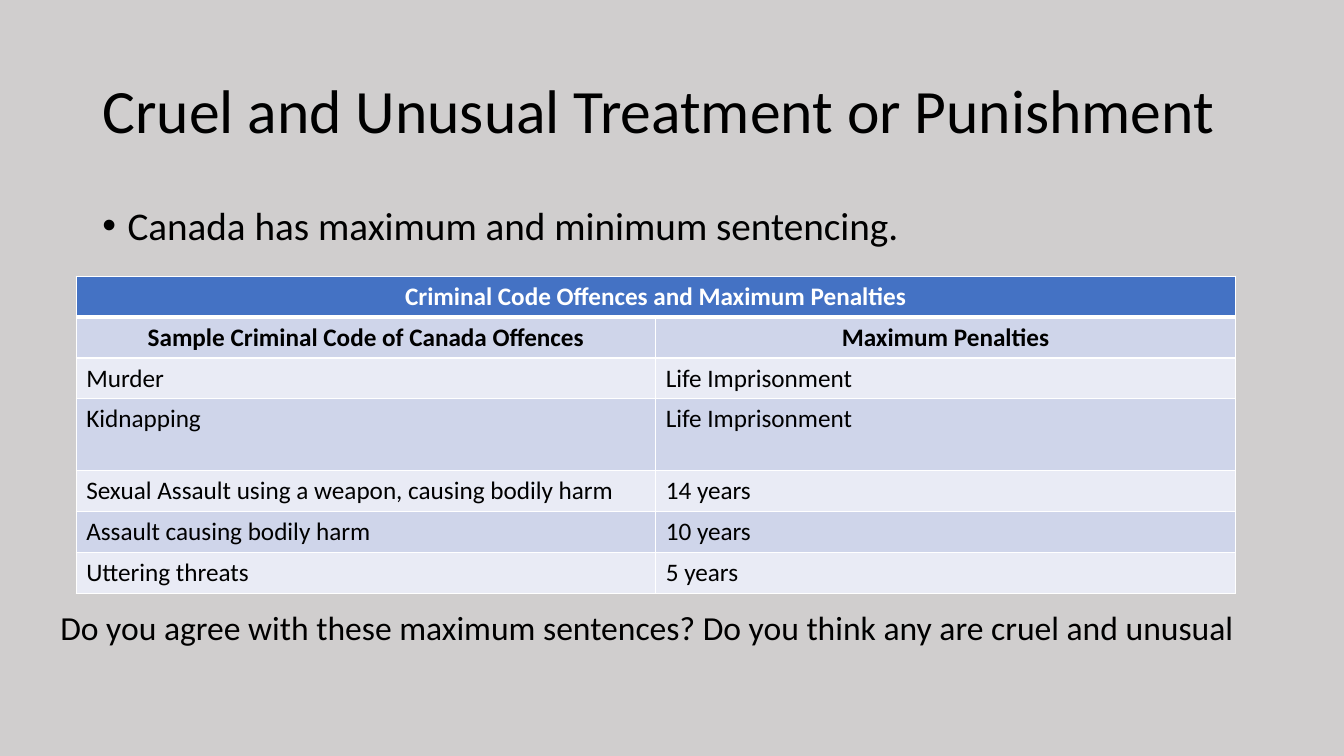
"""Build a slide on maximum penalties for sample Criminal Code offences."""
from dataclasses import dataclass

from lxml import etree
from pptx import Presentation
from pptx import util as u
from pptx.dml.color import RGBColor
from pptx.enum import text
from pptx.oxml import ns


@dataclass(frozen=True)
class Theme:
    font: str = "Calibri"
    background: str = "D0CECE"
    ink: str = "000000"
    white: str = "FFFFFF"
    header: str = "4472C4"
    bands: tuple = ("E9EBF5", "CFD5EA")
    title_size: int = 44
    bullet_size: int = 28
    question_size: int = 24
    table_size: int = 18


THEME = Theme()


def write(tf, words, size, color=THEME.ink, bold=False, align=text.PP_ALIGN.LEFT):
    tf.word_wrap = True
    p = tf.paragraphs[0]
    p.text = words
    p.alignment = align
    p.font.name = THEME.font
    p.font.size = u.Pt(size)
    p.font.bold = bold
    p.font.color.rgb = RGBColor.from_string(color)
    return p


def add_border(cell, side, points):
    tc_pr = cell._tc.get_or_add_tcPr()
    ln = etree.SubElement(tc_pr, ns.qn(f"a:ln{side}"), w=str(u.Pt(points)))
    fill = etree.SubElement(ln, ns.qn("a:solidFill"))
    etree.SubElement(fill, ns.qn("a:srgbClr"), val=THEME.white)


prs = Presentation()
prs.slide_width, prs.slide_height = u.Cm(33.87), u.Cm(19.05)
s = prs.slides.add_slide(prs.slide_layouts[5])
s.background.fill.solid()
s.background.fill.fore_color.rgb = RGBColor.from_string(THEME.background)

title = s.shapes.title
title.left, title.top, title.width, title.height = u.Cm(2.33), u.Cm(1.01), u.Cm(29.21), u.Cm(3.68)
title.text_frame.vertical_anchor = text.MSO_ANCHOR.MIDDLE
p = write(title.text_frame, "Cruel and Unusual Treatment or Punishment", THEME.title_size)
p.line_spacing = 0.9

statement = s.shapes.add_textbox(u.Cm(2.33), u.Cm(5.07), u.Cm(29.21), u.Cm(1.88))
p = write(statement.text_frame, "Canada has maximum and minimum sentencing.", THEME.bullet_size)
p.line_spacing = 0.9
p.space_before = u.Pt(10)
p_pr = p._p.get_or_add_pPr()
p_pr.set("marL", str(u.Pt(18)))
p_pr.set("indent", str(-u.Pt(18)))
etree.SubElement(p_pr, ns.qn("a:buFont"), typeface="Arial")
etree.SubElement(p_pr, ns.qn("a:buChar"), char="•")

rows = [
    ("Criminal Code Offences and Maximum Penalties", ""),
    ("Sample Criminal Code of Canada Offences", "Maximum Penalties"),
    ("Murder", "Life Imprisonment"),
    ("Kidnapping", "Life Imprisonment"),
    ("Sexual Assault using a weapon, causing bodily harm", "14 years"),
    ("Assault causing bodily harm", "10 years"),
    ("Uttering threats", "5 years"),
]
row_height, kidnapping_height = u.Cm(1.03), u.Cm(1.81)
table_height = row_height * (len(rows) - 1) + kidnapping_height
table = s.shapes.add_table(len(rows), 2, u.Cm(1.92), u.Cm(6.96), u.Cm(29.21), table_height).table
table.cell(0, 0).merge(table.cell(0, 1))

for i, row in enumerate(rows):
    table.rows[i].height = kidnapping_height if row[0] == "Kidnapping" else row_height
    is_heading = i < 2
    for j, words in enumerate(row):
        cell = table.cell(i, j)
        for side in "LRTB":
            thick = (i, side) in ((0, "B"), (1, "T"))
            add_border(cell, side, 3 if thick else 1)
        cell.fill.solid()
        cell.fill.fore_color.rgb = RGBColor.from_string(THEME.bands[i % 2] if i else THEME.header)
        if words:
            write(cell.text_frame, words, THEME.table_size,
                  THEME.ink if i else THEME.white, is_heading,
                  text.PP_ALIGN.CENTER if is_heading else text.PP_ALIGN.LEFT)

question = s.shapes.add_textbox(u.Cm(1.27), u.Cm(15.16), u.Cm(31.32), u.Cm(1.28))
write(question.text_frame,
      "Do you agree with these maximum sentences? Do you think any are cruel and unusual",
      THEME.question_size)
question.text_frame.auto_size = text.MSO_AUTO_SIZE.SHAPE_TO_FIT_TEXT

prs.save("out.pptx")
